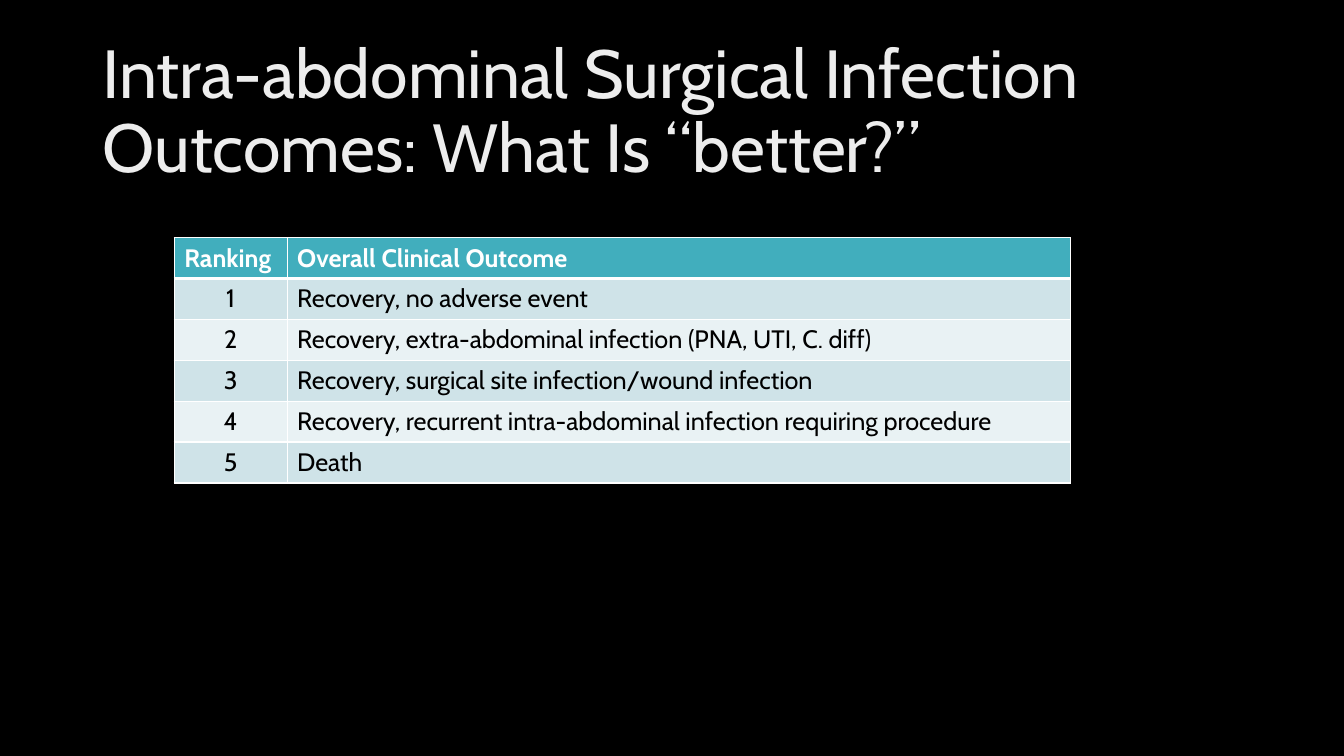
import pptx
import pptx.util
import pptx.dml.color
import pptx.enum.text
import pptx.oxml
import pptx.oxml.ns

Pt = pptx.util.Pt
RGB = pptx.dml.color.RGBColor
ALIGN = pptx.enum.text.PP_ALIGN
BLACK = RGB(0x00, 0x00, 0x00)
WHITE = RGB(0xFF, 0xFF, 0xFF)
PEARL = RGB(0xED, 0xED, 0xED)
TEAL = RGB(0x41, 0xAE, 0xBD)
MIST = RGB(0xCF, 0xE3, 0xE8)
PALE = RGB(0xE9, 0xF2, 0xF4)

HEAD = ("Ranking", "Overall Clinical Outcome")
RANKS = (
    "Recovery, no adverse event",
    "Recovery, extra-abdominal infection (PNA, UTI, C. diff)",
    "Recovery, surgical site infection/wound infection",
    "Recovery, recurrent intra-abdominal infection requiring procedure",
    "Death",
)


class Deck:
    """Hold the font and the current slide, and draw each kind of element."""

    def __init__(self, font):
        self.font = font
        self.show = pptx.Presentation()
        self.show.slide_width = Pt(960)
        self.show.slide_height = Pt(540)
        self.slide = self.show.slides.add_slide(self.show.slide_layouts[5])
        fill = self.slide.background.fill
        fill.solid()
        fill.fore_color.rgb = BLACK

    def style(self, para, size, color, bold=False, align=ALIGN.LEFT):
        para.alignment = align
        para.font.name = self.font
        para.font.size = Pt(size)
        para.font.bold = bold
        para.font.color.rgb = color

    def title(self, text, left, top, width, height):
        box = self.slide.shapes.title
        box.left, box.top = Pt(left), Pt(top)
        box.width, box.height = Pt(width), Pt(height)
        frame = box.text_frame
        frame.text = text
        frame.word_wrap = True
        frame.auto_size = pptx.enum.text.MSO_AUTO_SIZE.NONE
        frame.vertical_anchor = pptx.enum.text.MSO_ANCHOR.MIDDLE
        para = frame.paragraphs[0]
        para.line_spacing = 0.9
        self.style(para, 48.6, PEARL)

    def edge(self, cell, side, width):
        space = pptx.oxml.ns.nsdecls("a")
        line = pptx.oxml.parse_xml(
            f'<a:ln{side} {space} w="{Pt(width)}"><a:solidFill>'
            f'<a:srgbClr val="{WHITE}"/></a:solidFill></a:ln{side}>')
        cell._tc.get_or_add_tcPr().append(line)

    def table(self, rows, left, top, widths, height):
        grid = self.slide.shapes.add_table(
            len(rows), len(widths), Pt(left), Pt(top),
            Pt(sum(widths)), Pt(height * len(rows))).table
        for col, width in zip(grid.columns, widths):
            col.width = Pt(width)
        for r, row in enumerate(rows):
            grid.rows[r].height = Pt(height)
            back = TEAL if r == 0 else MIST if r % 2 else PALE
            for c, text in enumerate(row):
                cell = grid.cell(r, c)
                cell.text = text
                for side in "LRTB":
                    thick = (r, side) in ((0, "B"), (1, "T"))
                    self.edge(cell, side, 3 if thick else 1)
                cell.fill.solid()
                cell.fill.fore_color.rgb = back
                mid = r > 0 and c == 0
                self.style(cell.text_frame.paragraphs[0], 18,
                           BLACK if r else WHITE, r == 0,
                           ALIGN.CENTER if mid else ALIGN.LEFT)


def main():
    deck = Deck("Cabin")
    deck.title("Intra-abdominal Surgical Infection Outcomes: "
               "What Is “better?”", 66, 28.75, 828, 104.4)
    rows = [HEAD] + [(str(n), text) for n, text in enumerate(RANKS, 1)]
    deck.table(rows, 124.5, 169.8, (80.6, 559.4), 29.2)
    deck.show.save("out.pptx")


if __name__ == "__main__":
    main()
